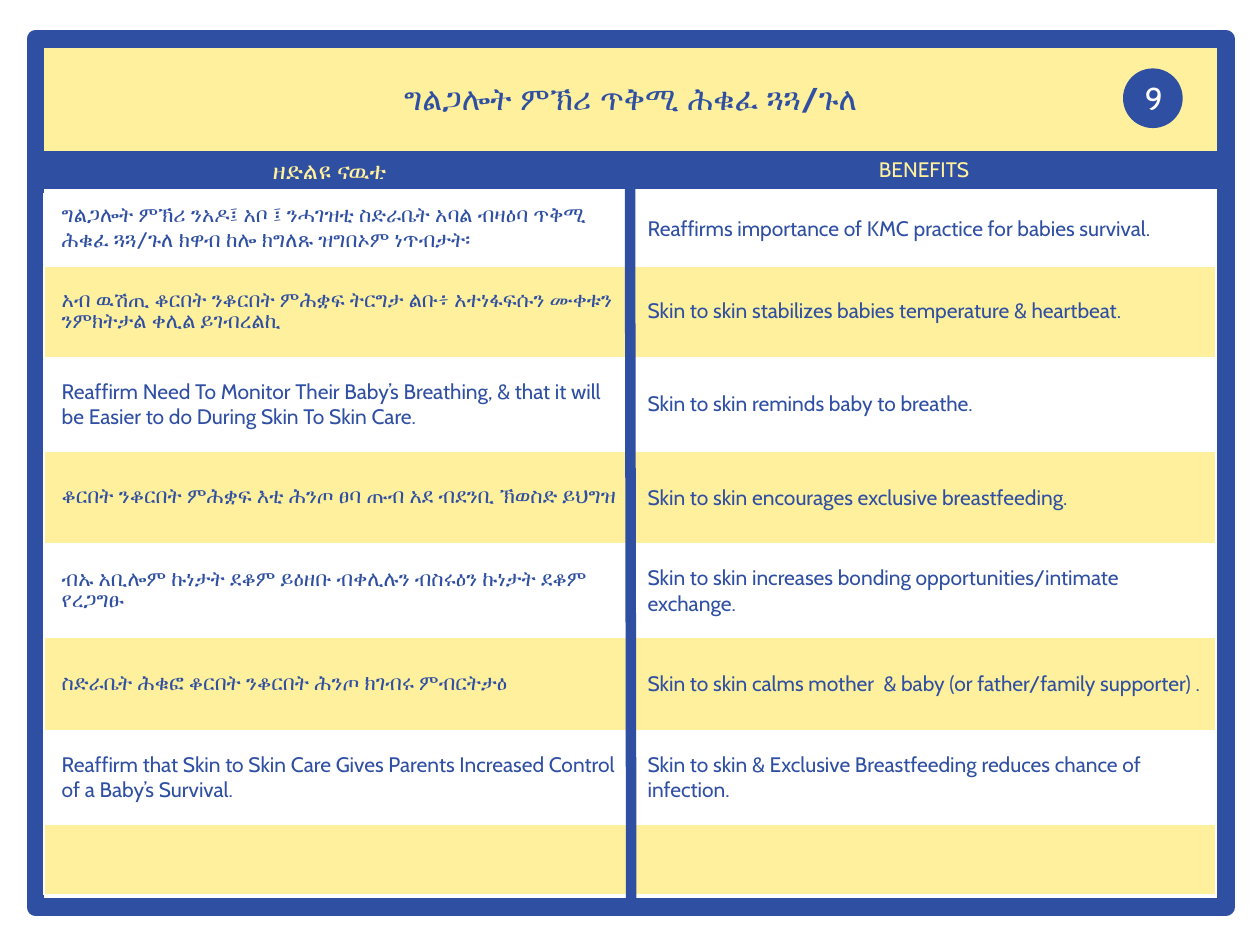
from dataclasses import dataclass

from lxml import etree
from pptx import Presentation
from pptx import util as u
from pptx.dml.color import RGBColor
from pptx.enum import shapes, text
from pptx.oxml import ns

BLUE = RGBColor(0x2F, 0x4F, 0xA2)
YELLOW = RGBColor(0xFE, 0xF0, 0x9C)
WHITE = RGBColor(0xFF, 0xFF, 0xFF)
FONT = "Cabin"


@dataclass(frozen=True)
class Box:
    left: float
    top: float
    width: float
    height: float

    def lengths(self) -> tuple:
        return tuple(u.Inches(n) for n in (self.left, self.top, self.width, self.height))


@dataclass(frozen=True)
class Label:
    content: str
    box: Box
    size: int
    color: RGBColor
    bold: bool = False
    anchor: text.MSO_ANCHOR = text.MSO_ANCHOR.TOP


@dataclass(frozen=True)
class Row:
    point: str
    benefit: str
    height: float = 0.74


LABELS = [
    Label("ዘድልዩ ናዉቲ", Box(0.28, 1.19, 4.67, 0.34), 14, YELLOW),
    Label("BENEFITS", Box(5, 1.19, 4.67, 0.3), 12, YELLOW),
]
TITLE = Label("ግልጋሎት ምኽሪ ጥቅሚ ሕቁፈ ጓጓ/ጉለ", Box(0.28, 0.58, 9.45, 0.4), 18, BLUE,
              True, text.MSO_ANCHOR.MIDDLE)
ROWS = [
    Row("ግልጋሎት ምኽሪ ንአዶ፤ አቦ ፤ ንሓገዝቲ ስድራቤት አባል ብዛዕባ ጥቅሚ ሕቁፈ ጓጓ/ጉለ ክዋብ ከሎ ክግለጹ ዝግበኦም ነጥብታት፡",
        "Reaffirms importance of KMC practice for babies survival.", 0.56),
    Row("አብ ዉሽጢ ቆርበት ንቆርበት ምሕቋፍ ትርግታ ልቡ፥ አተነፋፍሱን ሙቀቱን ንምክትታል ቀሊል ይገብረልኪ",
        "Skin to skin stabilizes babies temperature & heartbeat."),
    Row("Reaffirm Need To Monitor Their Baby’s Breathing, & that it will be Easier to do During Skin To Skin Care.",
        "Skin to skin reminds baby to breathe."),
    Row("ቆርበት ንቆርበት ምሕቋፍ እቲ ሕንጦ ፀባ ጡብ አደ ብደንቢ ኽወስድ ይህግዝ",
        "Skin to skin encourages exclusive breastfeeding."),
    Row("ብኡ አቢሎም ኩነታት ደቆም ይዕዘቡ ብቀሊሉን ብስሩዕን ኩነታት ደቆም የረጋግፁ",
        "Skin to skin increases bonding opportunities/intimate exchange."),
    Row("ስድራቤት ሕቁፎ ቆርበት ንቆርበት ሕንጦ ክገብሩ ምብርትታዕ",
        "Skin to skin calms mother  & baby (or father/family supporter) ."),
    Row("Reaffirm that Skin to Skin Care Gives Parents Increased Control of a Baby’s Survival.",
        "Skin to skin & Exclusive Breastfeeding reduces chance of infection."),
    Row("", "", 0.56),
]


def add_run(paragraph, content: str, size: int, color: RGBColor, bold: bool = False) -> None:
    run = paragraph.add_run()
    run.text = content
    run.font.name = FONT
    run.font.size = u.Pt(size)
    run.font.bold = bold
    run.font.color.rgb = color


def add_panel(slide, kind, box: Box, fill=None, line=None, line_width: float = 1):
    shape = slide.shapes.add_shape(kind, *box.lengths())
    shape.shadow.inherit = False
    if fill is None:
        shape.fill.background()
    else:
        shape.fill.solid()
        shape.fill.fore_color.rgb = fill
    if line is None:
        shape.line.fill.background()
    else:
        shape.line.color.rgb = line
        shape.line.width = u.Pt(line_width)
    return shape


def add_label(slide, label: Label) -> None:
    frame = slide.shapes.add_textbox(*label.box.lengths()).text_frame
    frame.word_wrap = True
    frame.vertical_anchor = label.anchor
    paragraph = frame.paragraphs[0]
    paragraph.alignment = text.PP_ALIGN.CENTER
    add_run(paragraph, label.content, label.size, label.color, label.bold)


def add_rule(slide, start: tuple[float, float], end: tuple[float, float]) -> None:
    points = [u.Inches(n) for n in (*start, *end)]
    connector = slide.shapes.add_connector(shapes.MSO_CONNECTOR.STRAIGHT, *points)
    connector.line.color.rgb = BLUE
    connector.line.width = u.Pt(6)
    etree.SubElement(connector._element.spPr, ns.qn("a:effectLst"))


def set_borders(cell, bottom_width: float) -> None:
    properties = cell._tc.get_or_add_tcPr()
    for index, side in enumerate("LRTB"):
        width = bottom_width if side == "B" else 1
        line = etree.Element(ns.qn(f"a:ln{side}"), w=str(u.Pt(width)))
        fill = etree.SubElement(line, ns.qn("a:solidFill"))
        etree.SubElement(fill, ns.qn("a:srgbClr"), val=str(WHITE))
        properties.insert(index, line)


def fill_cell(cell, content: str, fill: RGBColor, bottom_width: float) -> None:
    cell.fill.solid()
    cell.fill.fore_color.rgb = fill
    cell.vertical_anchor = text.MSO_ANCHOR.MIDDLE
    cell.margin_left, cell.margin_right = u.Inches(0.14), u.Inches(0.07)
    cell.margin_top = cell.margin_bottom = u.Inches(0.04)
    if content:
        add_run(cell.text_frame.paragraphs[0], content, 12, BLUE)
    set_borders(cell, bottom_width)


def add_benefits_table(slide, box: Box) -> None:
    table = slide.shapes.add_table(len(ROWS), 2, *box.lengths()).table
    table.first_row = table.horz_banding = False
    for column in table.columns:
        column.width = u.Inches(box.width / 2)
    for index, row in enumerate(ROWS):
        table.rows[index].height = u.Inches(row.height)
        for cell, content in zip(table.rows[index].cells, (row.point, row.benefit)):
            fill_cell(cell, content, YELLOW if index % 2 else WHITE, 1 if index else 3)


def main() -> None:
    """Build the counselling slide and save it."""
    presentation = Presentation()
    presentation.slide_width, presentation.slide_height = u.Inches(10), u.Inches(7.5)
    slide = presentation.slides.add_slide(presentation.slide_layouts[6])
    rectangle = shapes.MSO_SHAPE.RECTANGLE
    add_panel(slide, rectangle, Box(0.28, 0.31, 9.45, 1.18), YELLOW)
    add_panel(slide, rectangle, Box(0.28, 0.31, 9.45, 6.89), line=BLUE, line_width=10)
    add_panel(slide, rectangle, Box(0.28, 1.2, 9.45, 0.3), BLUE)
    for label in LABELS:
        add_label(slide, label)
    add_benefits_table(slide, Box(0.35, 1.54, 9.3, 5.56))
    add_rule(slide, (5, 1.46), (5.01, 7.15))
    add_label(slide, TITLE)
    add_rule(slide, (0.28, 1.46), (9.66, 1.46))
    badge = add_panel(slide, shapes.MSO_SHAPE.OVAL, Box(8.92, 0.55, 0.46, 0.46), BLUE, BLUE)
    badge.text_frame.vertical_anchor = text.MSO_ANCHOR.MIDDLE
    paragraph = badge.text_frame.paragraphs[0]
    paragraph.alignment = text.PP_ALIGN.CENTER
    add_run(paragraph, "9", 18, WHITE)
    presentation.save("out.pptx")


if __name__ == "__main__":
    main()
